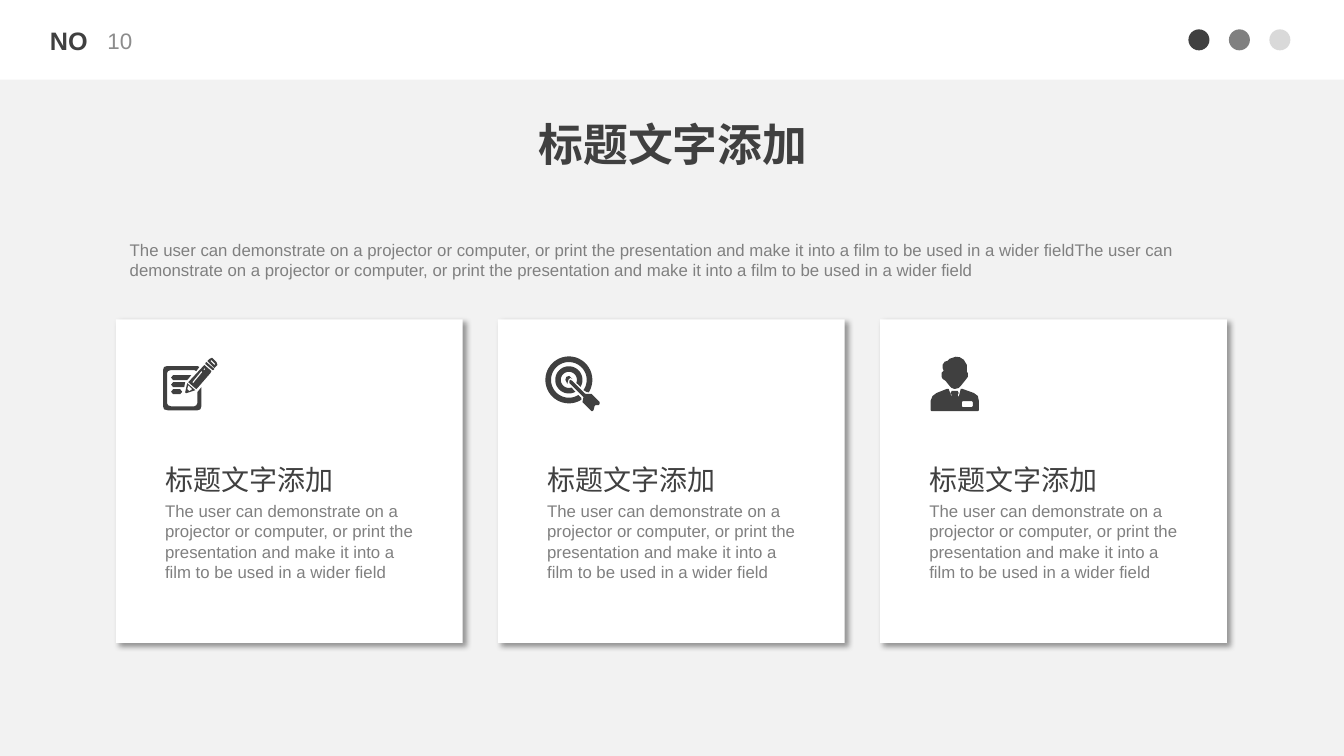
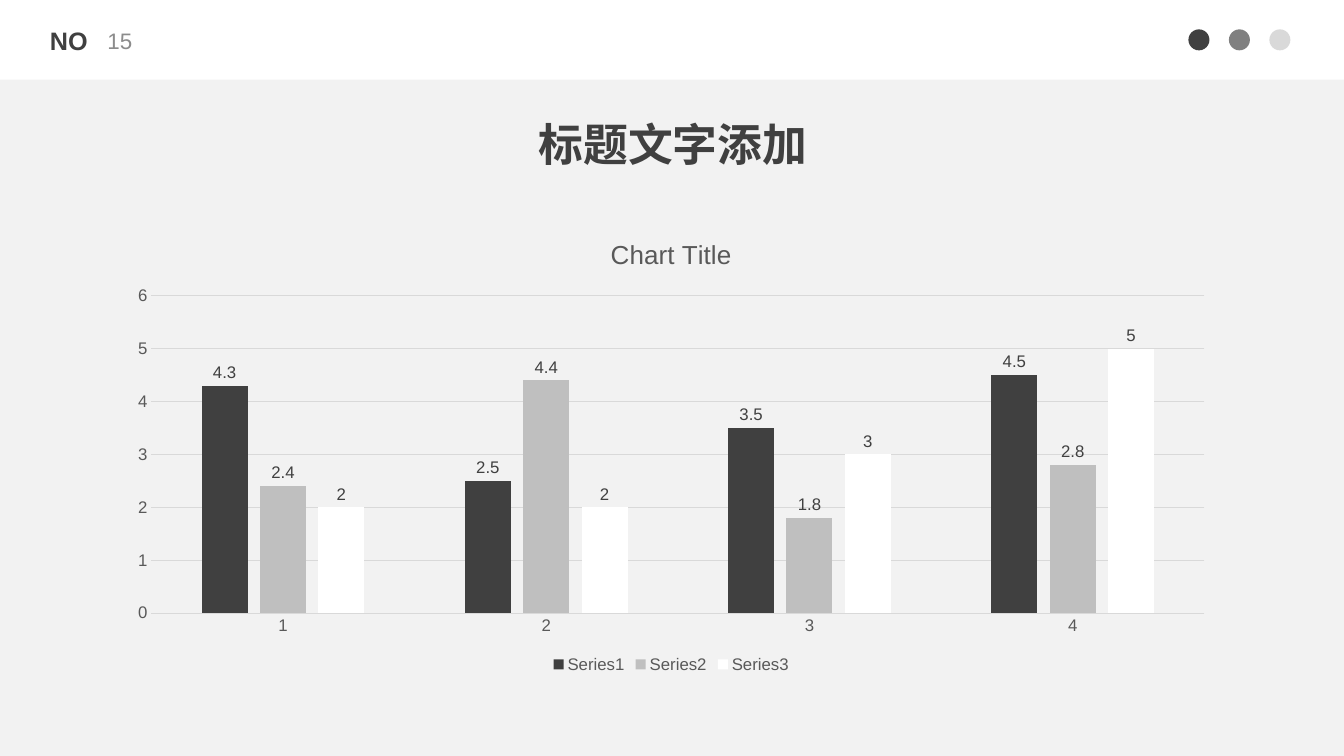
"""Build two grey and white slides: three icon cards and a column chart."""
from math import cos, radians, sin

from lxml import etree
from pptx import Presentation
from pptx.chart.data import CategoryChartData
from pptx.dml.color import RGBColor
from pptx.enum.chart import XL_CHART_TYPE, XL_LABEL_POSITION, XL_LEGEND_POSITION, XL_TICK_MARK
from pptx.enum.shapes import MSO_SHAPE
from pptx.enum.text import MSO_ANCHOR, MSO_AUTO_SIZE, PP_ALIGN
from pptx.oxml.ns import qn
from pptx.util import Cm, Pt

RECT, OVAL = MSO_SHAPE.RECTANGLE, MSO_SHAPE.OVAL
LEFT, CENTER, RIGHT = PP_ALIGN.LEFT, PP_ALIGN.CENTER, PP_ALIGN.RIGHT
TOP, MIDDLE = MSO_ANCHOR.TOP, MSO_ANCHOR.MIDDLE
GROW = MSO_AUTO_SIZE.SHAPE_TO_FIT_TEXT
COLUMNS = XL_CHART_TYPE.COLUMN_CLUSTERED
OUTSIDE = XL_LABEL_POSITION.OUTSIDE_END
BOTTOM = XL_LEGEND_POSITION.BOTTOM
NO_TICK = XL_TICK_MARK.NONE

DARK, GREY, PALE = "404040", "808080", "D9D9D9"
WHITE, BACKGROUND = "FFFFFF", "F2F2F2"
NUMBER, CHART_TEXT, SILVER = "8C8C8C", "595959", "BFBFBF"
SANS, CJK = "Arial", "Noto Sans CJK SC"

TITLE = "标题文字添加"
BODY = ("The user can demonstrate on a projector or computer, or print the presentation "
        "and make it into a film to be used in a wider field")
CARD_LEFT, CARD_TOP, CARD_STEP = 2.92, 8.05, 9.63
ICON_UNIT, ICON_DETAIL = 0.0254, 100


def arc(cx, cy, radius, start, end, steps=48):
    """Return points along a circular arc, angles in degrees."""
    angles = [radians(start + (end - start) * i / steps) for i in range(steps + 1)]
    return [(cx + radius * cos(a), cy + radius * sin(a)) for a in angles]


NOTE_ICON = [
    [(10, 17), (28, 17), (24, 22), (10, 22), (8, 19.5)],
    [(10, 24), (22, 24), (21, 29), (10, 29), (8, 26.5)],
    [(10, 31), (17, 31), (19, 33.5), (17, 36), (10, 36), (8, 33.5)],
    [(24, 25), (32, 32), (23, 35), (22, 34)],
    [(25, 27), (24, 31), (26, 33), (29, 31)],
    [(41, 7), (48, 13), (47, 15), (34, 30), (33, 31), (25, 24), (26, 23), (40, 8)],
    [(38, 13), (39, 14), (30, 25), (29, 24)],
    [(41, 10), (42, 11), (41, 12), (40, 12)],
    [(43, 4), (51, 11), (50, 12), (49, 12), (42, 6), (42, 5)],
    [(48, 0), (49, 0), (53, 4), (54, 7), (51, 10), (44, 3), (46, 1)],
    [(48, 2), (47, 3), (51, 7), (52, 6)],
    [(4, 8), (34, 8), (36, 9), (33, 13), (31, 12), (8, 12), (5, 13), (4, 15), (4, 45),
     (5, 47), (8, 48), (31, 48), (33, 47), (34, 45), (34, 34), (38, 29), (38, 48),
     (37, 51), (34, 52), (5, 52), (1, 51), (0, 48), (0, 12), (1, 9)],
]
TARGET_ICON = [
    arc(23.5, 23, 23.3, 58, 392) + [(41, 35)] + arc(23.5, 23, 17.7, 395, 58) + [(36, 41)],
    arc(23.5, 23, 13.5, 61, 391) + arc(23.5, 23, 8, 382, 72),
    [(24, 19), (27, 22), (25, 21), (23, 23), (22, 27), (20, 23), (21, 20)],
    [(25, 23), (27, 24), (40, 37), (46, 37), (54, 45), (54, 47), (53, 48), (50, 48),
     (49, 49), (48, 53), (47, 54), (46, 54), (38, 46), (37, 45), (38, 40), (24, 26), (24, 24)],
]
PERSON_ICON = [
    [(32, 44), (41, 44), (42, 45), (42, 49), (41, 50), (32, 50), (31, 49), (31, 45)],
    [(16, 32), (18, 32), (21, 40), (21, 38), (20, 36), (21, 34), (27, 34), (28, 36),
     (27, 38), (28, 40), (30, 32), (32, 32), (43, 36), (47, 39), (48, 44), (48, 53),
     (47, 54), (1, 54), (0, 53), (0, 44), (2, 39), (6, 36)],
    [(25, 0), (29, 0.5), (33, 3), (36, 8), (36, 15), (37, 16), (37, 20), (34, 24),
     (30, 29), (28, 31), (24, 32), (21, 31), (19, 29), (15, 24), (12, 22), (11, 20),
     (11, 16), (13, 14), (12, 11), (12, 8), (14, 5), (17, 4), (19, 2)],
]
CARDS = [(NOTE_ICON, 1.19, 0.97), (TARGET_ICON, 1.19, 0.94), (PERSON_ICON, 1.27, 0.94)]
SERIES = [
    ("Series1", (4.3, 2.5, 3.5, 4.5), DARK),
    ("Series2", (2.4, 4.4, 1.8, 2.8), SILVER),
    ("Series3", (2, 2, 3, 5), WHITE),
]


def rgb(color):
    """Turn a hex string into a colour."""
    return RGBColor.from_string(color)


def paint(sp, color):
    """Give a shape a plain fill without line or shadow."""
    sp.fill.solid()
    sp.fill.fore_color.rgb = rgb(color)
    sp.line.fill.background()
    sp.shadow.inherit = False


def style_font(font, size, color, name=SANS, bold=False):
    """Set the look of a font."""
    font.size, font.name, font.bold = Pt(size), name, bold
    font.color.rgb = rgb(color)


def add_block(s, kind, left, top, width, height, color):
    """Add a plain preset shape."""
    sp = s.shapes.add_shape(kind, Cm(left), Cm(top), Cm(width), Cm(height))
    paint(sp, color)
    return sp


def add_shadow(sp):
    """Cast a soft shadow to the lower right."""
    effects = sp._element.spPr.find(qn("a:effectLst"))
    shadow = etree.SubElement(effects, qn("a:outerShdw"), blurRad=str(Pt(4)), dist=str(Pt(3)),
                              dir="2700000", algn="tl", rotWithShape="0")
    black = etree.SubElement(shadow, qn("a:srgbClr"), val="000000")
    etree.SubElement(black, qn("a:alpha"), val="40000")


def add_text(s, text, left, top, width, height, size, color, name=SANS, bold=False,
             align=LEFT, anchor=TOP, wrap=True):
    """Add a one-paragraph text box."""
    tf = s.shapes.add_textbox(Cm(left), Cm(top), Cm(width), Cm(height)).text_frame
    tf.word_wrap, tf.vertical_anchor = wrap, anchor
    tf.auto_size = GROW
    tf.text = text
    p = tf.paragraphs[0]
    p.alignment = align
    r = p.runs[0]
    style_font(r.font, size, color, name, bold)
    if name == CJK:
        etree.SubElement(r.font._element, qn("a:ea"), typeface=name)


def add_icon(s, contours, left, top):
    """Draw an icon whose inner contours cut holes."""
    outlines = [[(x * ICON_DETAIL, y * ICON_DETAIL) for x, y in c] for c in contours]
    first, *others = outlines
    builder = s.shapes.build_freeform(*first[0], scale=Cm(ICON_UNIT) / ICON_DETAIL)
    builder.add_line_segments(first[1:], close=True)
    for outline in others:
        builder.move_to(*outline[0])
        builder.add_line_segments(outline[1:], close=True)
    paint(builder.convert_to_shape(Cm(left), Cm(top)), DARK)


def add_card(s, left, icon, icon_dx, icon_dy):
    """Add a white card with icon, heading and text."""
    add_shadow(add_block(s, RECT, left, CARD_TOP, 8.74, 8.15, WHITE))
    add_icon(s, icon, left + icon_dx, CARD_TOP + icon_dy)
    add_text(s, TITLE, left + 0.99, 11.53, 6.78, 1.11, 20, DARK, CJK)
    add_text(s, BODY, left + 0.99, 12.5, 6.78, 2.31, 12, GREY)


def style_axis(axis):
    """Set the label font and drop the tick marks."""
    style_font(axis.tick_labels.font, 12, CHART_TEXT)
    axis.major_tick_mark = axis.minor_tick_mark = NO_TICK


def style_line(line):
    """Set the thin pale line of axis and grid."""
    line.color.rgb = rgb(PALE)
    line.width = Pt(0.75)


def add_column_chart(s):
    """Add the clustered column chart."""
    data = CategoryChartData()
    data.categories = ["1", "2", "3", "4"]
    for name, values, _ in SERIES:
        data.add_series(name, values)
    chart = s.shapes.add_chart(COLUMNS, Cm(2.92), Cm(5.49), Cm(27.99), Cm(11.58), data).chart
    style_font(chart.font, 10, "000000")
    title = chart.chart_title.text_frame
    title.text = "Chart Title"
    style_font(title.paragraphs[0].runs[0].font, 18.6, CHART_TEXT)
    chart.has_legend = True
    chart.legend.position = BOTTOM
    chart.legend.include_in_layout = False
    style_font(chart.legend.font, 12, CHART_TEXT)

    style_axis(chart.category_axis)
    style_line(chart.category_axis.format.line)
    axis = chart.value_axis
    style_axis(axis)
    axis.minimum_scale, axis.maximum_scale, axis.major_unit = 0, 6, 1
    axis.format.line.fill.background()
    style_line(axis.major_gridlines.format.line)

    plot = chart.plots[0]
    plot.gap_width, plot.overlap, plot.vary_by_categories = 219, -27, False
    for series, (_, _, color) in zip(plot.series, SERIES):
        series.format.fill.solid()
        series.format.fill.fore_color.rgb = rgb(color)
        series.invert_if_negative = False
        labels = series.data_labels
        labels.show_value, labels.position = True, OUTSIDE
        style_font(labels.font, 12, DARK)


def add_page(prs, number):
    """Add a slide with the shared top band, number and title."""
    s = prs.slides.add_slide(prs.slide_layouts[6])
    add_block(s, RECT, 0, 0, 33.87, 2.01, WHITE)
    for i, color in enumerate((DARK, GREY, PALE)):
        add_block(s, OVAL, 29.95 + 1.02 * i, 0.74, 0.53, 0.53, color)
    add_text(s, "NO", 0.99, 0.51, 1.47, 1.02, 18, DARK, bold=True, align=RIGHT, wrap=False)
    add_text(s, number, 2.46, 0.51, 1.8, 1.02, 16, NUMBER, anchor=MIDDLE)
    add_text(s, TITLE, 10.03, 2.82, 13.87, 1.63, 32, DARK, CJK, bold=True, align=CENTER)
    return s


def main():
    """Build and save the deck."""
    prs = Presentation()
    prs.slide_width, prs.slide_height = Cm(33.87), Cm(19.05)
    fill = prs.slide_master.background.fill
    fill.solid()
    fill.fore_color.rgb = rgb(BACKGROUND)

    s = add_page(prs, "10")
    add_text(s, BODY * 2, 3.02, 5.92, 27.89, 1.27, 12, GREY)
    for i, card in enumerate(CARDS):
        add_card(s, CARD_LEFT + CARD_STEP * i, *card)

    add_column_chart(add_page(prs, "15"))
    prs.save("out.pptx")


main()
